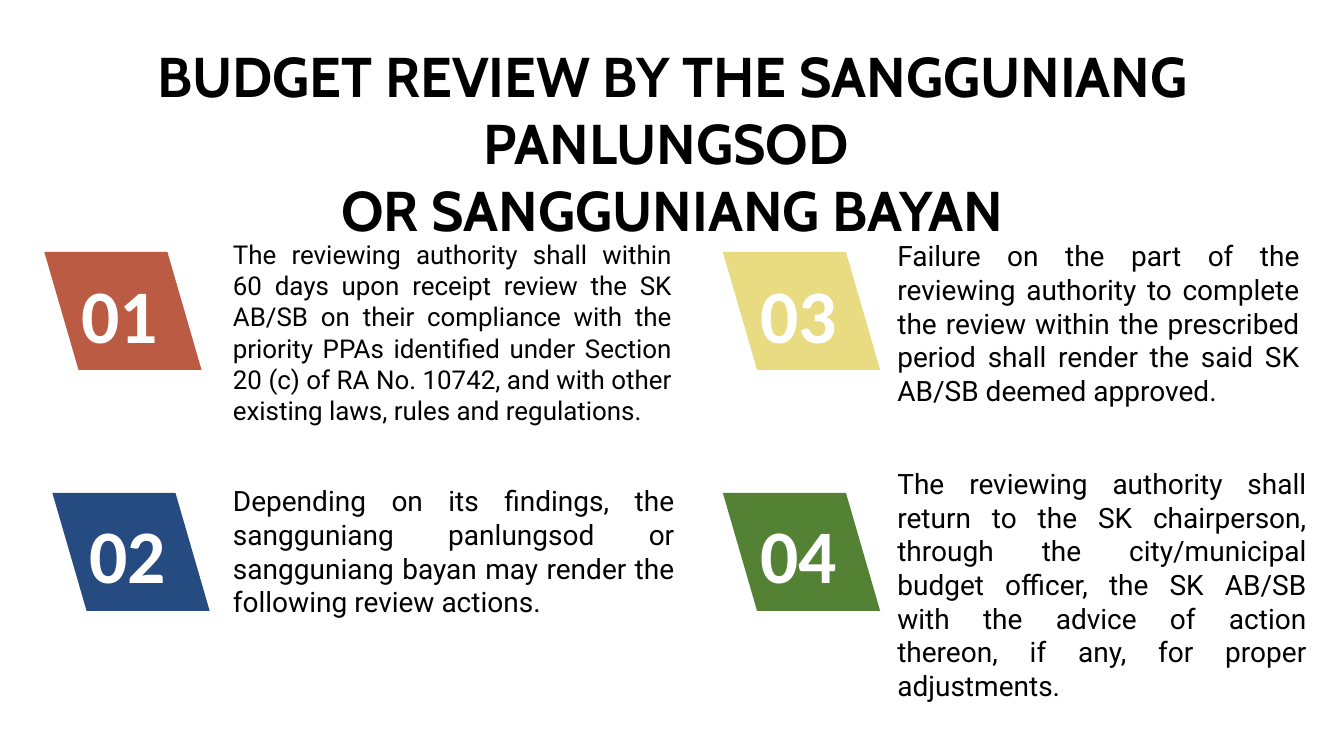
import pptx
import pptx.util
import pptx.dml.color
import pptx.enum.shapes
import pptx.enum.text

Inches = pptx.util.Inches
ALIGN = pptx.enum.text.PP_ALIGN
ANCHOR = pptx.enum.text.MSO_ANCHOR
AUTO = pptx.enum.text.MSO_AUTO_SIZE

# Content
TITLE = ["BUDGET REVIEW BY THE SANGGUNIANG PANLUNGSOD ", "OR SANGGUNIANG BAYAN"]
# number, badge colour, badge left and top, text box, text size, text
STEPS = [
    ("01", "BB5B43", (0.44, 2.5), (2.31, 2.32, 4.35, 1.66), 18.5,
     "The reviewing authority shall within 60 days upon receipt review the SK "
     "AB/SB on their compliance with the priority PPAs identified under Section "
     "20 (c) of RA No. 10742, and with other existing laws, rules and regulations. "),
    ("02", "264B80", (0.52, 4.89), (2.31, 4.75, 4.38, 1.45), 20,
     "Depending on its findings, the sangguniang panlungsod or sangguniang bayan "
     "may render the following review actions."),
    ("03", "E9DB82", (7.17, 2.5), (8.9, 2.32, 3.99, 1.45), 20,
     "Failure on the part of the reviewing authority to complete the review within "
     "the prescribed period shall render the said SK AB/SB deemed approved."),
    ("04", "548235", (7.17, 4.89), (8.9, 4.58, 4.06, 1.78), 20,
     "The reviewing authority shall return to the SK chairperson, through the "
     "city/municipal budget officer, the SK AB/SB with the advice of action "
     "thereon, if any, for proper adjustments. "),
]
BADGE_SIZE = (1.56, 1.17)

# Formats
TITLE_FONT = {"name": "Cabin", "size": pptx.util.Pt(40), "bold": True}
NUMBER_FONT = {"name": "Calibri", "size": pptx.util.Pt(54), "bold": True}


def colour(target, hex_value):
    target.rgb = pptx.dml.color.RGBColor.from_string(hex_value)


def write(shape, lines, font, hex_value, align, anchor, margins, fit=AUTO.NONE):
    frame = shape.text_frame
    left, top, right, bottom = (Inches(m) for m in margins)
    layout = {"word_wrap": True, "auto_size": fit, "vertical_anchor": anchor,
              "margin_left": left, "margin_top": top,
              "margin_right": right, "margin_bottom": bottom}
    for key, value in layout.items():
        setattr(frame, key, value)
    for index, line in enumerate(lines):
        paragraph = frame.add_paragraph() if index else frame.paragraphs[0]
        paragraph.alignment = align
        run = paragraph.add_run()
        run.text = line
        for key, value in font.items():
            setattr(run.font, key, value)
        colour(run.font.color, hex_value)


def add_badge(slide, number, fill, corner):
    badge = slide.shapes.add_shape(
        pptx.enum.shapes.MSO_SHAPE.PARALLELOGRAM,
        *(Inches(v) for v in corner + BADGE_SIZE))
    badge.adjustments[0] = 0.29
    badge._element.spPr.xfrm.set("flipH", "1")
    badge.shadow.inherit = False
    badge.fill.solid()
    colour(badge.fill.fore_color, fill)
    badge.line.fill.background()
    write(badge, [number], NUMBER_FONT, "FFFFFF", ALIGN.LEFT, ANCHOR.BOTTOM,
          (0.1, 0.85, 0.1, 0.05))


def add_text(slide, box, *args):
    write(slide.shapes.add_textbox(*(Inches(v) for v in box)), *args)


def main():
    deck = pptx.Presentation()
    deck.slide_width, deck.slide_height = Inches(13.33), Inches(7.5)
    slide = deck.slides.add_slide(deck.slide_layouts[6])

    # Title
    add_text(slide, (0.17, 0.73, 13, 1.36), TITLE, TITLE_FONT, "000000",
             ALIGN.CENTER, ANCHOR.MIDDLE, (0.07, 0.04, 0.07, 0.04))

    # Numbered steps
    for number, fill, corner, box, size, text in STEPS:
        add_badge(slide, number, fill, corner)
        font = {"name": "Roboto", "size": pptx.util.Pt(size)}
        add_text(slide, box, [text], font, "000000", ALIGN.JUSTIFY, ANCHOR.TOP,
                 (0, 0.05, 0, 0.05), AUTO.SHAPE_TO_FIT_TEXT)

    deck.save("out.pptx")


if __name__ == "__main__":
    main()
